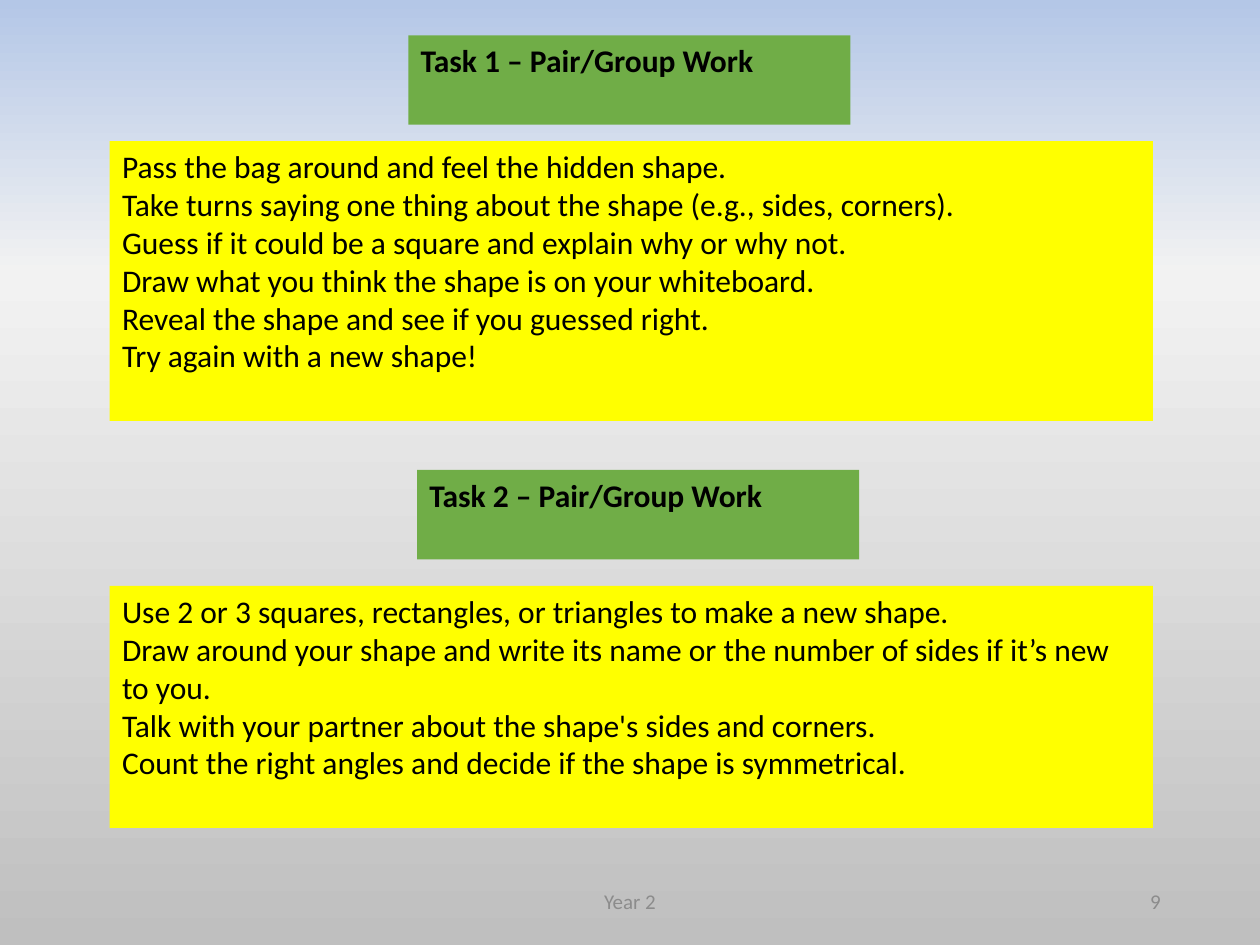
import copy
from dataclasses import dataclass

import pptx
import pptx.dml.color
import pptx.enum.shapes
import pptx.enum.text
import pptx.oxml.ns
import pptx.util

Inches = pptx.util.Inches
RGB = pptx.dml.color.RGBColor.from_string
Align = pptx.enum.text.PP_ALIGN
Anchor = pptx.enum.text.MSO_ANCHOR


@dataclass(frozen=True)
class Theme:
    font: str = "Calibri"
    body_size: int = 18
    footer_size: int = 12
    text: str = "000000"
    footer: str = "8C8C8C"
    heading_fill: str = "70AD47"
    steps_fill: str = "FFFF00"
    backdrop: tuple = ((0, "B4C7E7"), (0.29, "F2F2F2"), (1, "BFBFBF"))


theme = Theme()


def write(shape, lines, size, color, bold=False, align=Align.LEFT, anchor=Anchor.TOP):
    frame = shape.text_frame
    frame.word_wrap = True
    frame.vertical_anchor = anchor
    frame.text = "\n".join(lines)
    for paragraph in frame.paragraphs:
        paragraph.alignment = align
        paragraph.font.name = theme.font
        paragraph.font.size = pptx.util.Pt(size)
        paragraph.font.bold = bold
        paragraph.font.color.rgb = RGB(color)


def add_panel(left, top, width, height, fill, lines, bold=False):
    panel = slide.shapes.add_shape(
        pptx.enum.shapes.MSO_SHAPE.RECTANGLE,
        Inches(left), Inches(top), Inches(width), Inches(height))
    panel.shadow.inherit = False
    panel.fill.solid()
    panel.fill.fore_color.rgb = RGB(fill)
    panel.line.fill.background()
    write(panel, lines, theme.body_size, theme.text, bold)


prs = pptx.Presentation()
prs.slide_width, prs.slide_height = Inches(10), Inches(7.5)
slide = prs.slides.add_slide(prs.slide_layouts[6])

# Background: three-stop vertical gradient
backdrop = slide.background.fill
backdrop.gradient()
backdrop.gradient_angle = 270
stop_list = next(slide.element.iter(pptx.oxml.ns.qn("a:gsLst")))
stop_list.append(copy.deepcopy(stop_list[-1]))
for stop, (position, color) in zip(backdrop.gradient_stops, theme.backdrop):
    stop.position = position
    stop.color.rgb = RGB(color)

# Tasks: heading left and top, steps top and height, heading, steps
tasks = [
    (3.24, 0.28, 1.12, 2.22, "Task 1 – Pair/Group Work", [
        "Pass the bag around and feel the hidden shape.",
        "Take turns saying one thing about the shape (e.g., sides, corners).",
        "Guess if it could be a square and explain why or why not.",
        "Draw what you think the shape is on your whiteboard.",
        "Reveal the shape and see if you guessed right.",
        "Try again with a new shape!",
    ]),
    (3.31, 3.73, 4.65, 1.92, "Task 2 – Pair/Group Work", [
        "Use 2 or 3 squares, rectangles, or triangles to make a new shape.",
        "Draw around your shape and write its name or the number of sides "
        "if it’s new to you.",
        "Talk with your partner about the shape's sides and corners.",
        "Count the right angles and decide if the shape is symmetrical.",
    ]),
]
for heading_left, heading_top, steps_top, steps_height, heading, steps in tasks:
    add_panel(heading_left, heading_top, 3.51, 0.71, theme.heading_fill, [heading], bold=True)
    add_panel(0.87, steps_top, 8.28, steps_height, theme.steps_fill, steps)

# Footer: year group and page number
for left, width, label, align in [
    (3.31, 3.38, "Year 2", Align.CENTER),
    (7.06, 2.25, "9", Align.RIGHT),
]:
    footer = slide.shapes.add_textbox(Inches(left), Inches(6.95), Inches(width), Inches(0.4))
    write(footer, [label], theme.footer_size, theme.footer, align=align, anchor=Anchor.MIDDLE)

prs.save("out.pptx")
